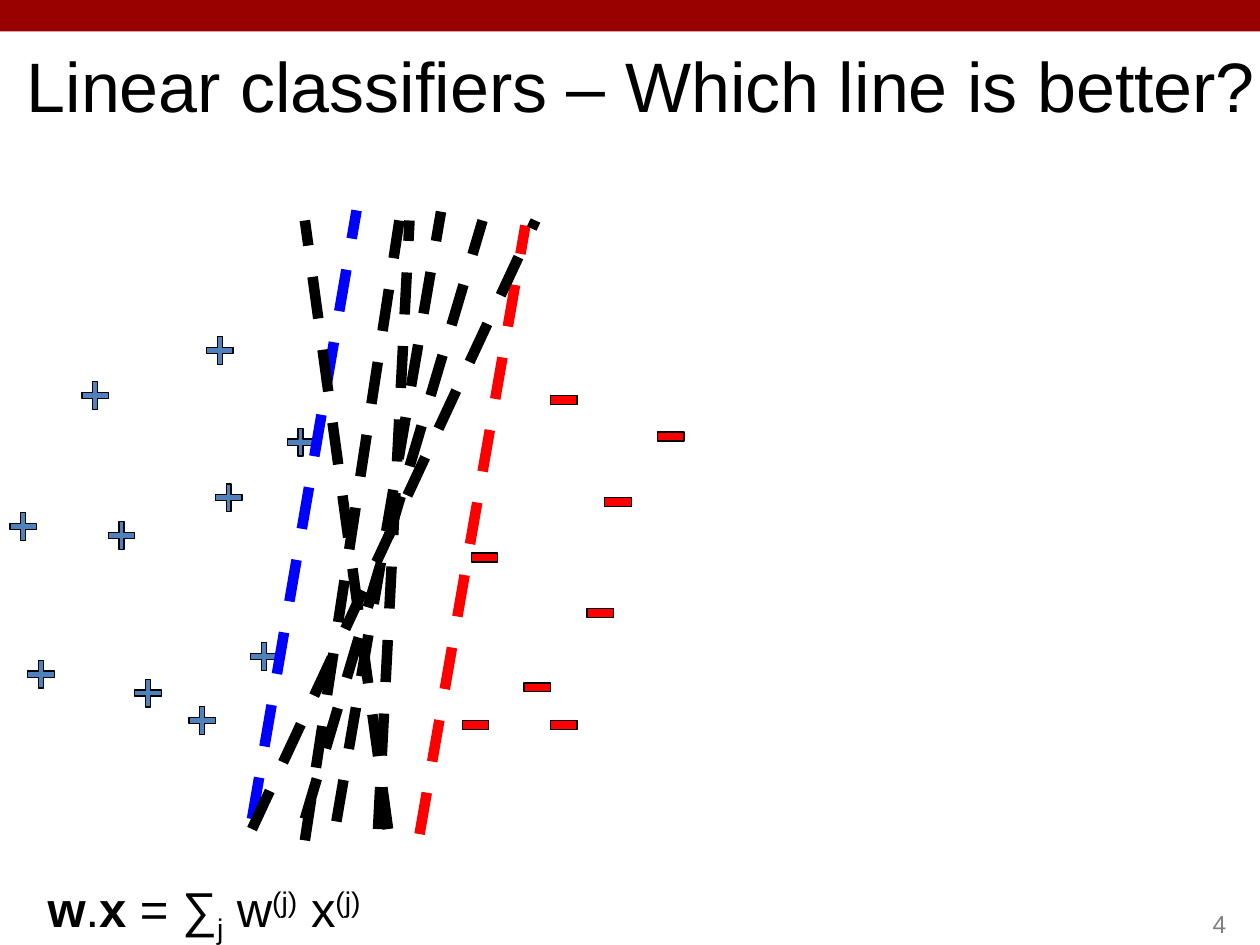
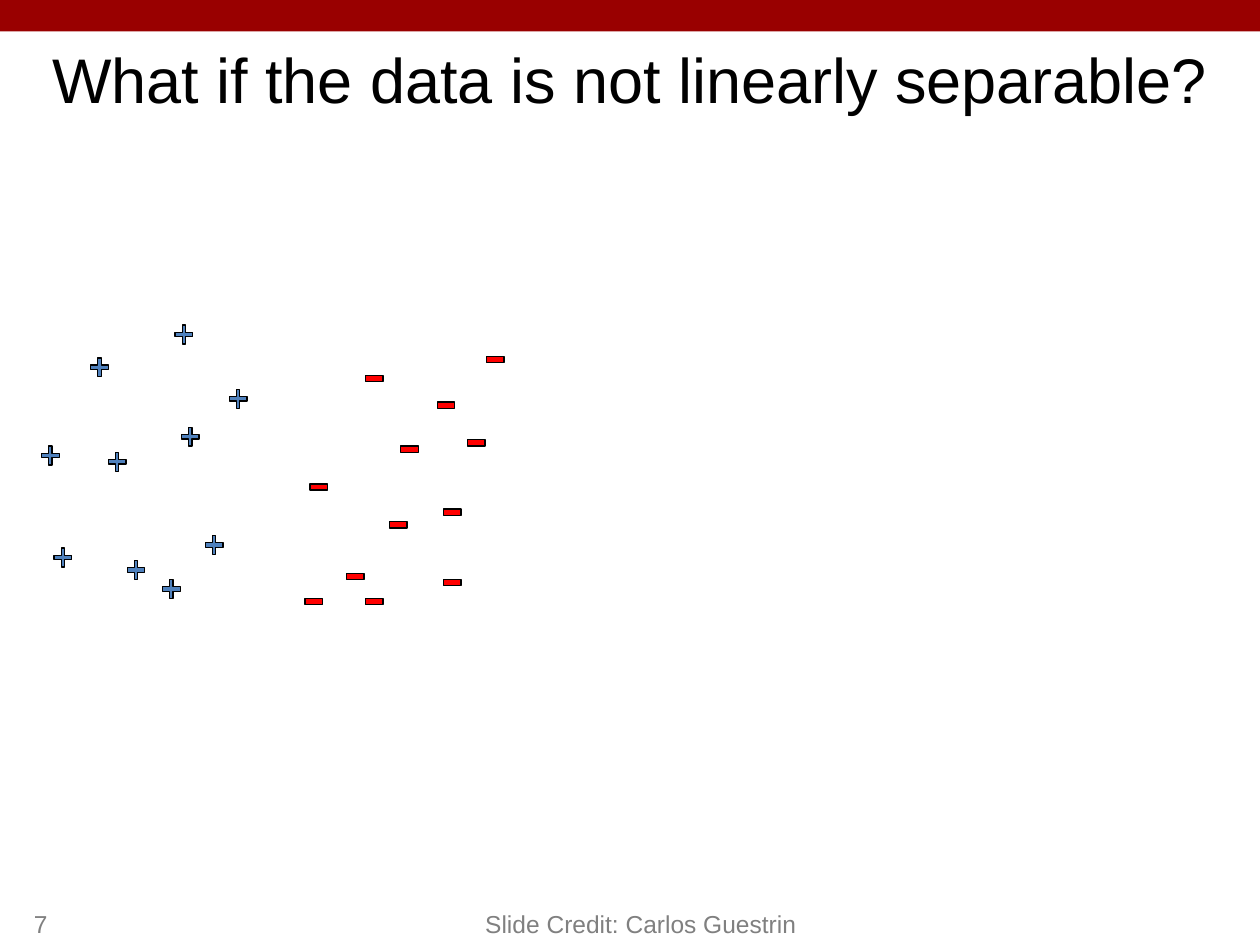
from lxml import etree
from pptx import Presentation
from pptx.dml.color import RGBColor
from pptx.enum.dml import MSO_LINE
from pptx.enum.shapes import MSO_CONNECTOR, MSO_SHAPE
from pptx.enum.text import MSO_ANCHOR, MSO_AUTO_SIZE, PP_ALIGN
from pptx.oxml.ns import qn
from pptx.util import Inches, Pt

RECT, PLUS = MSO_SHAPE.RECTANGLE, MSO_SHAPE.CROSS
LINE, DASH = MSO_CONNECTOR.STRAIGHT, MSO_LINE.DASH
TOP, MID, LOW = MSO_ANCHOR.TOP, MSO_ANCHOR.MIDDLE, MSO_ANCHOR.BOTTOM
LEFT, CENTER, RIGHT = PP_ALIGN.LEFT, PP_ALIGN.CENTER, PP_ALIGN.RIGHT
FIXED = MSO_AUTO_SIZE.NONE

BLACK = RGBColor(0x00, 0x00, 0x00)
GRAY = RGBColor(0x80, 0x80, 0x80)
MAROON = RGBColor(0x99, 0x00, 0x00)
STEEL = RGBColor(0x4F, 0x81, 0xBD)
BLUE = RGBColor(0x00, 0x00, 0xFF)
RED = RGBColor(0xFF, 0x00, 0x00)

BAND = (0, 0, 10, 0.25)
FOOT = {"size": 14, "color": GRAY, "anchor": LOW}

SUM = [("w", True, 0), (".", False, 0), ("x", True, 0), (" = ∑", False, 0),
       ("j", False, -25), (" w", False, 0), ("(j)", False, 30),
       (" x", False, 0), ("(j)", False, 30)]

SLIDES = [
    {
        "title": ("Linear classifiers – Which line is better?", (0, -0.08, 10.17, 1.5), 40),
        "plus": (0.21, 0.22),
        "pros": [(1.64, 2.67), (1.71, 3.84), (0.86, 4.14), (1.07, 5.39), (0.22, 5.24),
                 (2.28, 3.4), (1.5, 5.61), (1.99, 5.1), (0.65, 3.03), (0.08, 4.07)],
        "minus": (0.21, 0.07),
        "cons": [(4.37, 3.14), (3.74, 4.39), (4.8, 3.95), (4.66, 4.83),
                 (4.16, 5.42), (4.37, 5.72), (3.67, 5.72), (5.22, 3.43)],
        "lines": [(2, 6.5, 2.83, 1.67, BLUE), (3.33, 6.62, 4.17, 1.79, RED),
                  (2.67, 6.52, 3.5, 1.68, BLACK), (3, 6.58, 3.25, 1.75, BLACK),
                  (2.42, 6.5, 3.83, 1.75, BLACK), (3.08, 6.58, 2.42, 1.75, BLACK),
                  (2, 6.58, 4.25, 1.75, BLACK), (2.42, 6.67, 3.17, 1.75, BLACK)],
        "texts": [
            (SUM, (0.08, 6.92, 3.08, 0.57),
             {"size": 28, "color": BLACK, "anchor": TOP, "align": CENTER}),
            ([("4", False, 0)], (7.75, 7, 2.08, 0.5), {**FOOT, "align": RIGHT}),
        ],
    },
    {
        "title": ("What if the data is not linearly separable?", (0, 0.25, 10, 0.75), 36),
        "plus": (0.14, 0.15),
        "pros": [(1.39, 2.58), (1.44, 3.39), (0.86, 3.59), (1.01, 4.45), (0.43, 4.35),
                 (1.82, 3.09), (1.29, 4.6), (1.63, 4.25), (0.72, 2.84), (0.33, 3.54)],
        "minus": (0.14, 0.05),
        "cons": [(2.9, 2.98), (2.46, 3.84), (3.86, 2.83), (3.18, 3.54),
                 (3.52, 4.04), (3.09, 4.14), (2.75, 4.55), (2.9, 4.75),
                 (2.42, 4.75), (3.52, 4.6), (3.71, 3.49), (3.47, 3.19)],
        "lines": [],
        "texts": [
            ([("7", False, 0)], (0.17, 7, 3.17, 0.5), {**FOOT, "align": LEFT}),
            ([("Slide Credit: Carlos Guestrin", False, 0)], (3.5, 7, 2.92, 0.5),
             {**FOOT, "align": RIGHT}),
        ],
    },
]


def apply(item, **values):
    for key, value in values.items():
        setattr(item, key, value)


def place(item, box):
    apply(item, **dict(zip(("left", "top", "width", "height"), map(Inches, box))))


def write(shape, runs, size, color, anchor, align):
    frame = shape.text_frame
    apply(frame, word_wrap=True, auto_size=FIXED, vertical_anchor=anchor)
    para = frame.paragraphs[0]
    para.alignment = align
    for text, bold, base in runs:
        run = para.add_run()
        run.text = text
        apply(run.font, name="Arial", size=Pt(size), bold=bold)
        run.font.color.rgb = color
        if base:
            run._r.get_or_add_rPr().set("baseline", str(base * 1000))


def block(shapes, kind, box, fill):
    shape = shapes.add_shape(kind, *map(Inches, box))
    shape.shadow.inherit = False
    shape.fill.solid()
    shape.fill.fore_color.rgb = fill
    return shape


def marks(slide, kind, spots, size, fill):
    group = slide.shapes.add_group_shape()
    for spot in spots:
        mark = block(group.shapes, kind, spot + size, fill)
        mark.line.color.rgb = BLACK
        mark.line.width = Pt(0.75)
        if kind == PLUS:
            mark.adjustments[0] = 0.406


def dashes(slide, lines):
    for *ends, color in lines:
        line = slide.shapes.add_connector(LINE, *map(Inches, ends))
        line.line.color.rgb = color
        apply(line.line, width=Pt(6), dash_style=DASH)
        etree.SubElement(line.element.spPr, qn("a:effectLst"))


def band(slide, master):
    bar = block(slide.shapes, RECT, BAND, MAROON)
    bar.line.fill.background()
    bar.element.nvSpPr.cNvPr.set("id", "99")
    master.shapes.element.insert(2, bar.element)


def build(slide, data):
    text, box, size = data["title"]
    title = slide.shapes.title
    place(title, box)
    write(title, [(text, False, 0)], size, BLACK, MID, CENTER)
    marks(slide, PLUS, data["pros"], data["plus"], STEEL)
    marks(slide, RECT, data["cons"], data["minus"], RED)
    dashes(slide, data["lines"])
    for runs, box, style in data["texts"]:
        write(slide.shapes.add_textbox(*map(Inches, box)), runs, **style)


def main():
    deck = Presentation()
    apply(deck, slide_width=Inches(10), slide_height=Inches(7.5))
    for index, data in enumerate(SLIDES):
        slide = deck.slides.add_slide(deck.slide_layouts[5])
        if index == 0:
            band(slide, deck.slide_master)
        build(slide, data)
    deck.save("out.pptx")


if __name__ == "__main__":
    main()
